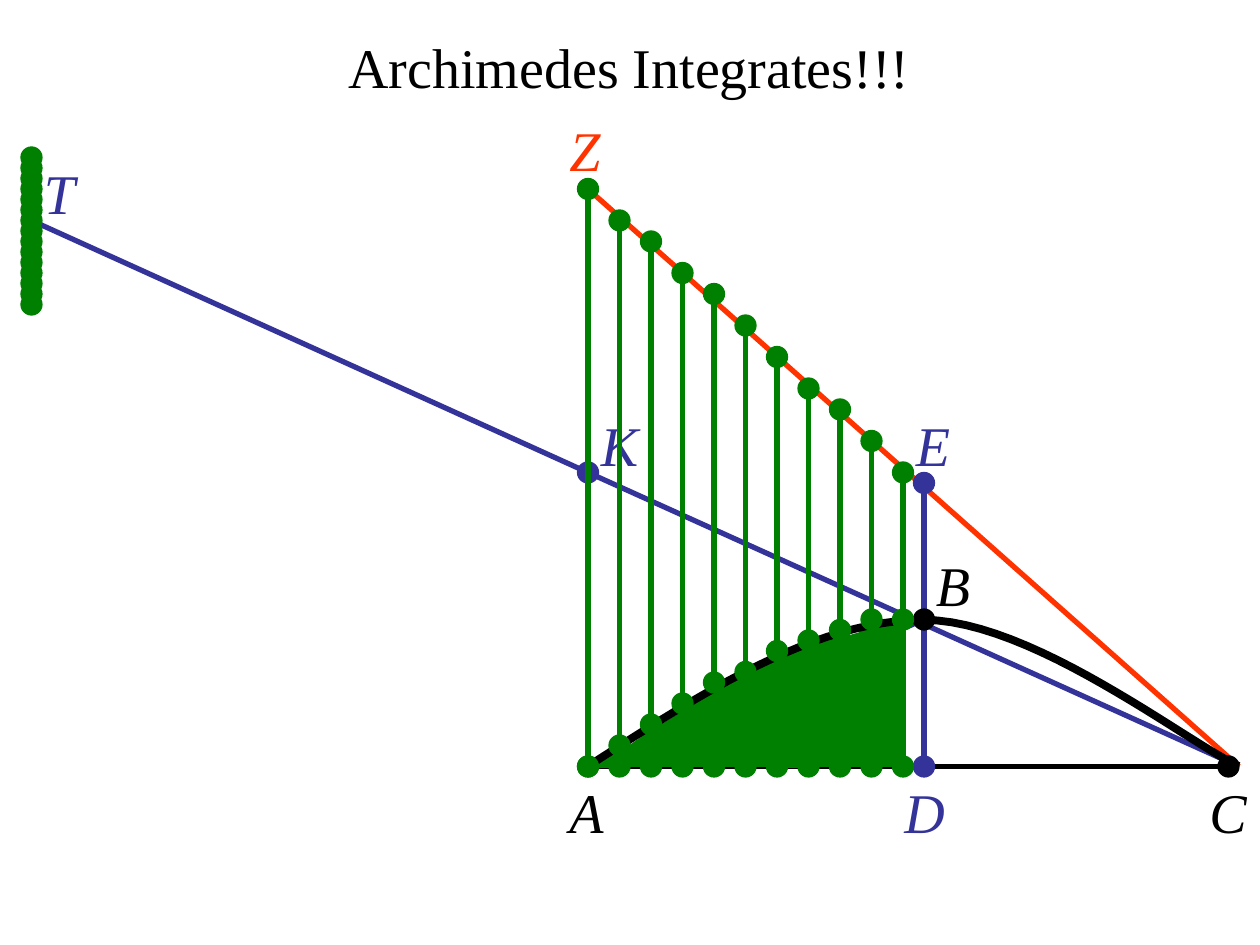
from dataclasses import dataclass
from typing import NamedTuple

from lxml import etree
from pptx import Presentation
from pptx.dml.color import RGBColor
from pptx.enum.shapes import MSO_CONNECTOR, MSO_SHAPE
from pptx.enum.text import MSO_ANCHOR, MSO_AUTO_SIZE, PP_ALIGN
from pptx.oxml.ns import qn
from pptx.util import Inches, Pt

STRAIGHT = MSO_CONNECTOR.STRAIGHT
OVAL, RECT, TRIANGLE = MSO_SHAPE.OVAL, MSO_SHAPE.RECTANGLE, MSO_SHAPE.RIGHT_TRIANGLE
TITLE_ONLY = 5


@dataclass(frozen=True)
class Theme:
    black: RGBColor = RGBColor(0x00, 0x00, 0x00)
    blue: RGBColor = RGBColor(0x33, 0x33, 0x99)
    red: RGBColor = RGBColor(0xFF, 0x33, 0x00)
    green: RGBColor = RGBColor(0x00, 0x80, 0x00)
    font: str = "Times New Roman"
    text: float = 32
    line: float = 3
    outline: float = 0.75
    curve: float = 4.5


T = Theme()


class Point(NamedTuple):
    """Position on the construction grid, twelve steps to the inch."""
    x: float
    y: float


class Segment(NamedTuple):
    start: Point
    end: Point
    color: RGBColor


class Label(NamedTuple):
    text: str
    x: float
    y: float
    color: RGBColor


class Box(NamedTuple):
    x: float
    y: float
    w: float
    h: float


# Named points of the construction
A, B, C, D = Point(56, 73), Point(88, 59), Point(118, 73), Point(88, 73)
E, K, Z, BALANCE = Point(88, 46), Point(56, 45), Point(56, 18), Point(3, 21)

LABELS = [
    Label("T", 0.25, 1.17, T.blue), Label("K", 4.67, 3.17, T.blue),
    Label("E", 7.17, 3.17, T.blue), Label("D", 7.08, 6.08, T.blue),
    Label("Z", 4.42, 0.83, T.red), Label("A", 4.42, 6.08, T.black),
    Label("B", 7.33, 4.28, T.black), Label("C", 9.5, 6.08, T.black),
]
SEGMENTS = [
    Segment(A, B, T.blue), Segment(C, Z, T.red), Segment(A, C, T.black),
    Segment(A, Z, T.red), Segment(E, D, T.blue), Segment(C, K, T.blue),
    Segment(K, BALANCE, T.blue),
]
# Slices stand three grid steps apart, from the tangent down to the base
SLICE_STEP = 3
TANGENT_Y = [18, 21, 23, 26, 28, 31, 34, 37, 39, 42, 45]
PARABOLA_Y = [73, 71, 69, 67, 65, 64, 62, 61, 60, 59, 59]
# Slices hung at T: top and bottom of each
HUNG = [(19, 24), (18, 24), (17, 25), (17, 26), (16, 27), (15, 27), (15, 28), (15, 29)]
# Filled area: sloped tops and the columns under them, in inches
SLOPES = [
    Box(4.66, 5.92, 0.25, 0.17), Box(4.92, 5.8, 0.25, 0.17), Box(5.08, 5.67, 0.33, 0.17),
    Box(5.25, 5.5, 0.41, 0.25), Box(5.58, 5.33, 0.33, 0.25), Box(5.66, 5.25, 0.5, 0.25),
    Box(5.91, 5.08, 0.5, 0.25), Box(6.16, 5, 0.5, 0.25), Box(6.58, 5, 0.33, 0.09),
    Box(6.83, 4.92, 0.33, 0.09),
]
COLUMNS = [
    Box(4.92, 5.97, 0.25, 0.11), Box(5.17, 5.83, 0.25, 0.25), Box(5.36, 5.75, 0.31, 0.33),
    Box(5.67, 5.58, 0.25, 0.5), Box(5.86, 5.5, 0.31, 0.58), Box(6.11, 5.34, 0.31, 0.75),
    Box(6.36, 5.25, 0.31, 0.83), Box(6.61, 5.08, 0.31, 1), Box(6.86, 5, 0.31, 1.08),
]
# Bezier control points of the two halves of the parabola, in inches
PARABOLA = [
    [(4.67, 6.08), (5.57, 5.5), (6.47, 4.92), (7.33, 4.92)],
    [(7.33, 4.92), (8.19, 4.92), (9.42, 5.89), (9.83, 6.08)],
]
CURVE_STEPS = 24


def grid(n: float) -> int:
    return Inches(n / 12)


def write(s, text: str, color: RGBColor, italic: bool, align: PP_ALIGN) -> None:
    tf = s.text_frame
    tf.word_wrap = True
    tf.auto_size = MSO_AUTO_SIZE.SHAPE_TO_FIT_TEXT
    tf.vertical_anchor = MSO_ANCHOR.TOP
    tf.margin_left = tf.margin_right = Inches(0.1)
    tf.margin_top, tf.margin_bottom = Inches(0.09), Inches(0.03)
    p = tf.paragraphs[0]
    p.alignment = align
    r = p.add_run()
    r.text = text
    r.font.name, r.font.size = T.font, Pt(T.text)
    r.font.italic = italic
    r.font.color.rgb = color


def add_line(shapes, seg: Segment) -> None:
    s = shapes.add_connector(STRAIGHT, *map(grid, (*seg.start, *seg.end)))
    s.line.color.rgb = seg.color
    s.line.width = Pt(T.line)
    etree.SubElement(s._element.spPr, qn("a:effectLst"))


def add_solid(shapes, kind: MSO_SHAPE, box: Box, color: RGBColor):
    s = shapes.add_shape(kind, *map(Inches, box))
    s.shadow.inherit = False
    s.fill.solid()
    s.fill.fore_color.rgb = color
    s.line.color.rgb = color
    s.line.width = Pt(T.outline)
    return s


def add_dot(shapes, center: Point, color: RGBColor) -> None:
    add_solid(shapes, OVAL, Box((center.x - 1) / 12, (center.y - 1) / 12, 2 / 12, 2 / 12), color)


def add_slope(shapes, box: Box) -> None:
    s = add_solid(shapes, TRIANGLE, box, T.green)
    s.rotation = 359
    s._element.spPr.xfrm.set("flipH", "1")


def bezier(ctrl: list, t: float) -> tuple:
    weights = ((1 - t) ** 3, 3 * t * (1 - t) ** 2, 3 * t * t * (1 - t), t ** 3)
    return tuple(Inches(sum(w * c[axis] for w, c in zip(weights, ctrl))) for axis in (0, 1))


def add_parabola(shapes) -> None:
    points = [bezier(half, i / CURVE_STEPS) for half in PARABOLA for i in range(CURVE_STEPS + 1)]
    path = shapes.build_freeform(*points[0])
    path.add_line_segments(points[1:], close=False)
    s = path.convert_to_shape()
    s.shadow.inherit = False
    s.fill.background()
    s.line.color.rgb = T.black
    s.line.width = Pt(T.curve)


def main() -> None:
    prs = Presentation()
    prs.slide_width, prs.slide_height = Inches(10), Inches(7.5)
    shapes = prs.slides.add_slide(prs.slide_layouts[TITLE_ONLY]).shapes

    # Title
    s = shapes.title
    s.left, s.top, s.width, s.height = map(Inches, (1.08, 0.17, 7.83, 0.63))
    write(s, "Archimedes Integrates!!!", T.black, False, PP_ALIGN.CENTER)

    # Labels and construction lines
    for label in LABELS:
        s = shapes.add_textbox(*map(Inches, (label.x, label.y, 1, 0.63)))
        write(s, label.text, label.color, True, PP_ALIGN.LEFT)
    for seg in SEGMENTS:
        add_line(shapes, seg)
    for center, color in ((B, T.black), (Point(C.x - 1, C.y), T.black),
                          (D, T.blue), (E, T.blue), (K, T.blue)):
        add_dot(shapes, center, color)

    # Slices hung at T
    for top, bottom in HUNG:
        add_line(shapes, Segment(Point(BALANCE.x, top), Point(BALANCE.x, bottom), T.green))
    for y in range(15, 30):
        add_dot(shapes, Point(BALANCE.x, y), T.green)

    # Slices of the triangle
    for i, y in enumerate(TANGENT_Y):
        top, foot = (Point(A.x + SLICE_STEP * i, end) for end in (y, A.y))
        add_line(shapes, Segment(top, foot, T.green))
        add_dot(shapes, top, T.green)
        add_dot(shapes, foot, T.green)

    # Filled area, parabola and the points on it
    for box in SLOPES:
        add_slope(shapes, box)
    for box in COLUMNS:
        add_solid(shapes, RECT, box, T.green)
    add_parabola(shapes)
    for i, y in enumerate(PARABOLA_Y):
        add_dot(shapes, Point(A.x + SLICE_STEP * i, y), T.green)

    prs.save("out.pptx")


if __name__ == "__main__":
    main()
